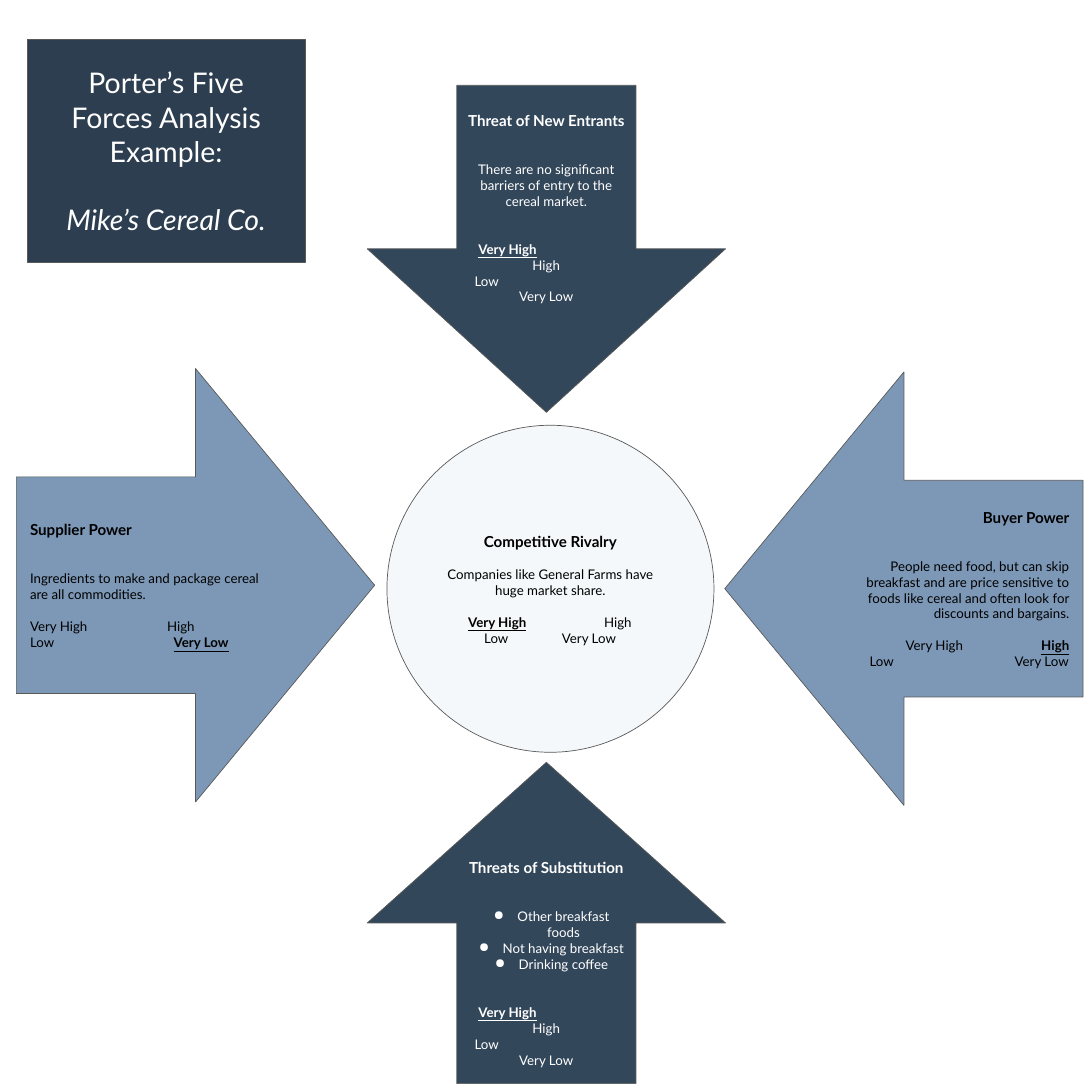
"""Build a one-slide Porter's Five Forces diagram for a cereal company."""
from lxml import etree
from pptx import Presentation
from pptx.dml.color import RGBColor
from pptx.enum.shapes import MSO_SHAPE
from pptx.enum.text import MSO_ANCHOR, MSO_AUTO_SIZE, PP_ALIGN
from pptx.oxml.ns import qn
from pptx.util import Pt

LEFT, CENTER, RIGHT = PP_ALIGN.LEFT, PP_ALIGN.CENTER, PP_ALIGN.RIGHT
MIDDLE, NO_FIT = MSO_ANCHOR.MIDDLE, MSO_AUTO_SIZE.NONE
DOWN, UP = MSO_SHAPE.DOWN_ARROW, MSO_SHAPE.UP_ARROW
TO_RIGHT, TO_LEFT = MSO_SHAPE.RIGHT_ARROW, MSO_SHAPE.LEFT_ARROW
OVAL = MSO_SHAPE.OVAL
WHITE = RGBColor(0xFF, 0xFF, 0xFF)
BLACK = RGBColor(0x00, 0x00, 0x00)
NAVY = RGBColor(0x2D, 0x3E, 0x50)
SLATE = RGBColor(0x33, 0x47, 0x5B)
STEEL = RGBColor(0x7C, 0x98, 0xB6)
PALE = RGBColor(0xF5, 0xF8, 0xFA)
GREY = RGBColor(0x59, 0x59, 0x59)
LINE = 16.8

STACKED = [[(12, "Very High")], [(69, "High")], [(8, "Low")], [(55, "Very Low")]]

FORCES = [
    dict(kind=DOWN, box=(387.4, 90, 378, 345), fill=SLATE, color=WHITE,
         inset=(10.8, 14.4), align=CENTER, gaps=(2, 2), title="Threat of New Entrants",
         body=["There are no significant barriers of entry to the cereal market."],
         ratings=STACKED, pick="Very High"),
    dict(kind=UP, box=(387.4, 804.2, 378, 339), fill=SLATE, color=WHITE,
         inset=(10.8, 14.4), align=CENTER, gaps=(2, 2), title="Threats of Substitution",
         body=["Other breakfast foods", "Not having breakfast", "Drinking coffee"],
         ratings=STACKED, pick="Very High"),
    dict(kind=TO_RIGHT, box=(17.3, 388.8, 378, 457.2), fill=STEEL, color=BLACK,
         inset=(14.4, 14.4), align=LEFT, gaps=(2, 1), title="Supplier Power",
         body=["Ingredients to make and package cereal are all commodities."],
         ratings=[[(0, "Very High"), (144.5, "High")], [(0, "Low"), (151.5, "Very Low")]],
         pick="Very Low"),
    dict(kind=TO_LEFT, box=(764.6, 392.4, 378, 457.2), fill=STEEL, color=BLACK,
         inset=(14.4, 14.4), align=RIGHT, gaps=(2, 1), title="Buyer Power",
         body=["People need food, but can skip breakfast and are price sensitive to "
               "foods like cereal and often look for discounts and bargains."],
         ratings=[[(82, "Very High"), (225, "High")], [(44, "Low"), (197, "Very Low")]],
         pick="High"),
    dict(kind=OVAL, box=(408.2, 448.6, 345, 345), fill=PALE, color=BLACK,
         inset=(7.2, 7.2), align=CENTER, gaps=(1, 1), title="Competitive Rivalry",
         body=["Companies like General Farms have huge market share."],
         ratings=[[(28, "Very High"), (171.5, "High")], [(45, "Low"), (127, "Very Low")]],
         pick="Very High"),
]


def style_box(sp, fill, inset):
    sp.fill.solid()
    sp.fill.fore_color.rgb = fill
    sp.line.color.rgb = GREY
    sp.line.width = Pt(0.75)
    tf = sp.text_frame
    tf.word_wrap = True
    tf.auto_size = NO_FIT
    tf.vertical_anchor = MIDDLE
    tf.margin_left = tf.margin_right = Pt(inset[0])
    tf.margin_top = tf.margin_bottom = Pt(inset[1])
    return tf


def add_run(p, text, size, color, bold=False):
    r = p.add_run()
    r.text = text
    r.font.name = "Lato"
    r.font.size = Pt(size)
    r.font.color.rgb = color
    r.font.bold = bold
    return r


prs = Presentation()
prs.slide_width = prs.slide_height = Pt(1152)
s = prs.slides.add_slide(prs.slide_layouts[5])

title = s.shapes.title
title.left, title.top, title.width, title.height = map(Pt, (28.8, 41.8, 293, 234.7))
tf = style_box(title, NAVY, (7.2, 7.2))
for i, text in enumerate(["Porter’s Five", "Forces Analysis Example:", "Mike’s Cereal Co."]):
    p = tf.add_paragraph() if i else tf.paragraphs[0]
    p.alignment = CENTER
    r = add_run(p, text, 30, WHITE)
    if i == 2:
        p.space_before = Pt(36)
        r.font.italic = True

for force in FORCES:
    sp = s.shapes.add_shape(force["kind"], *map(Pt, force["box"]))
    sp.shadow.inherit = False
    tf = style_box(sp, force["fill"], force["inset"])
    color = force["color"]
    body_gap, rating_gap = force["gaps"]

    p = tf.paragraphs[0]
    p.alignment = force["align"]
    add_run(p, force["title"], 16, color, True)

    for i, text in enumerate(force["body"]):
        p = tf.add_paragraph()
        p.alignment = force["align"]
        pPr = p._p.get_or_add_pPr()
        if force["align"] == RIGHT:
            pPr.set("marL", str(Pt(36)))
        if len(force["body"]) > 1:
            pPr.set("marL", str(Pt(36)))
            pPr.set("indent", str(Pt(-25.2)))
            clr = etree.SubElement(pPr, qn("a:buClr"))
            etree.SubElement(clr, qn("a:srgbClr"), val=str(color))
            etree.SubElement(pPr, qn("a:buChar"), char="●")
        if i == 0:
            p.space_before = Pt(body_gap * LINE)
        add_run(p, text, 14, color)

    for i, row in enumerate(force["ratings"]):
        p = tf.add_paragraph()
        p.alignment = LEFT
        tabs = etree.SubElement(p._p.get_or_add_pPr(), qn("a:tabLst"))
        if i == 0:
            p.space_before = Pt(rating_gap * LINE)
        for stop, label in row:
            if stop:
                etree.SubElement(tabs, qn("a:tab"), pos=str(Pt(stop)), algn="l")
                add_run(p, "\t", 14, color)
            picked = label == force["pick"]
            r = add_run(p, label, 14, color, picked)
            r.font.underline = picked

prs.save("out.pptx")
